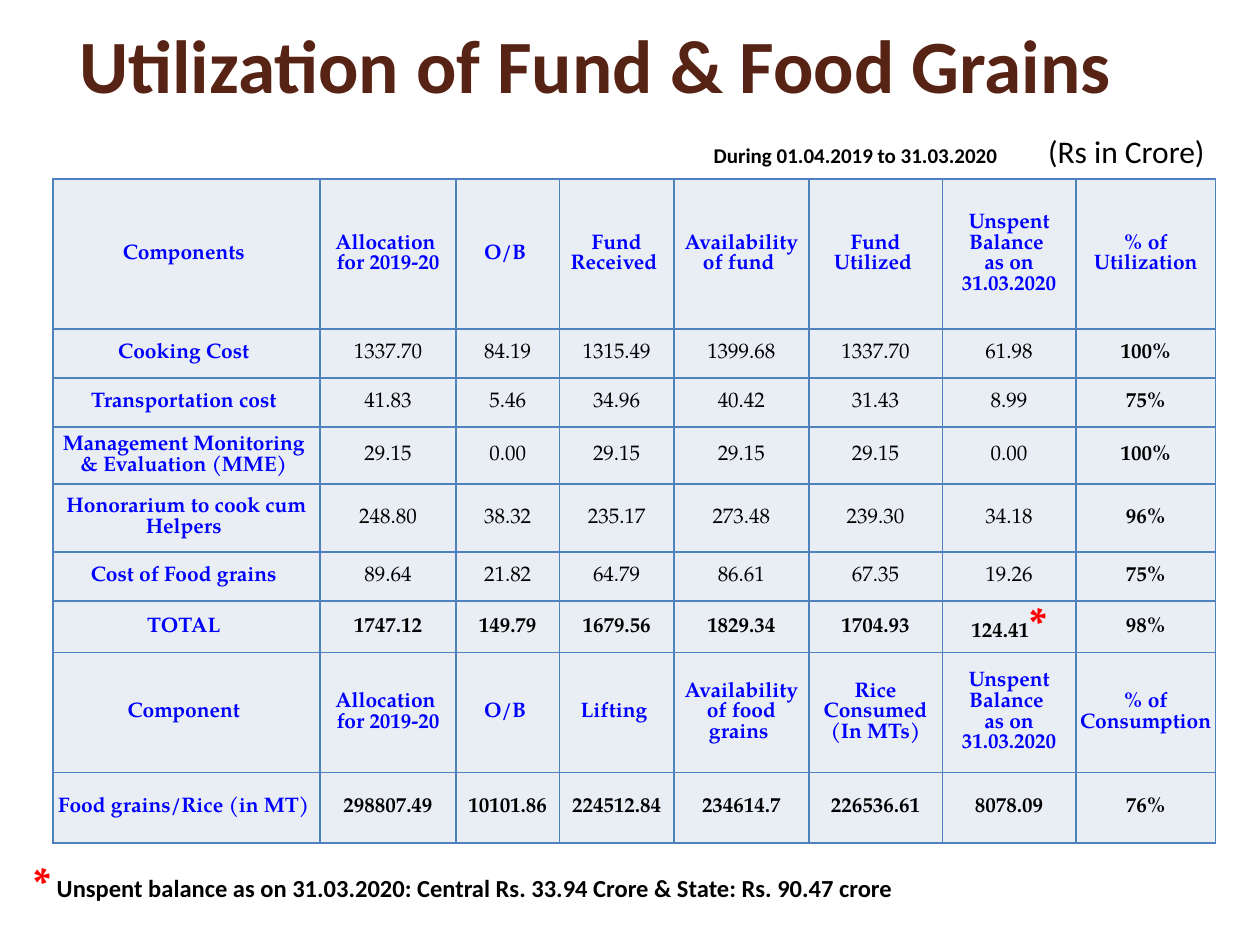
from lxml.etree import SubElement
from pptx import Presentation
from pptx.dml.color import RGBColor
from pptx.enum.text import MSO_ANCHOR as Anchor, MSO_AUTO_SIZE as AutoSize, PP_ALIGN as Align
from pptx.oxml.ns import qn
from pptx.util import Inches, Pt

SANS, SERIF = "Calibri", "TeX Gyre Pagella"
BLACK, BLUE, RED, BROWN = "000000", "0000FF", "FF0000", "572314"
CELL_FILL, GRID = "E9EDF4", "4F81BD"

COL_WIDTHS = [2.12, 1.08, 0.82, 0.91, 1.07, 1.06, 1.06, 1.11]
ROW_HEIGHTS = [1.19, 0.39, 0.39, 0.45, 0.54, 0.39, 0.39, 0.95, 0.56]
HEADER_ROWS = (0, 7)
BOLD_ROWS = (6, 8)
# A line break starts a new paragraph; a closing * becomes a red mark.
ROWS = [
    ["Components ", "Allocation \nfor 2019-20", "O/B ", "Fund Received ", "Availability of fund ",
     "Fund Utilized ", "Unspent Balance \nas on 31.03.2020", "% of Utilization"],
    ["Cooking Cost ", "1337.70", "84.19", "1315.49", "1399.68", "1337.70", "61.98", "100%"],
    ["Transportation cost ", "41.83", "5.46", "34.96", "40.42", "31.43", "8.99", "75%"],
    ["Management Monitoring \n& Evaluation (MME) ", "29.15", "0.00", "29.15", "29.15", "29.15",
     "0.00", "100%"],
    ["Honorarium to cook cum Helpers ", "248.80", "38.32", "235.17", "273.48", "239.30",
     "34.18", "96%"],
    ["Cost of Food grains ", "89.64", "21.82", "64.79", "86.61", "67.35", "19.26", "75%"],
    ["TOTAL ", "1747.12", "149.79", "1679.56", "1829.34", "1704.93", "124.41*", "98%"],
    ["Component ", "Allocation \nfor 2019-20", "O/B ", "Lifting ", "Availability of food grains ",
     "Rice Consumed (In MTs)", "Unspent Balance \nas on 31.03.2020", "% of Consumption"],
    ["Food grains/Rice (in MT) ", "298807.49", "10101.86", "224512.84", "234614.7", "226536.61",
     "8078.09", "76%"],
]


def rgb(color):
    return RGBColor.from_string(color)


def add_run(p, text, size, font=SANS, color=BLACK, bold=False):
    r = p.add_run()
    r.text = text
    r.font.size, r.font.name, r.font.bold = Pt(size), font, bold
    r.font.color.rgb = rgb(color)


def add_star(p):
    add_run(p, "*", 24, SERIF, RED, True)


def add_title(s, text):
    sp = s.shapes.title
    sp.left, sp.top, sp.width, sp.height = map(Inches, (0.5, 0.09, 8.58, 0.82))
    tf = sp.text_frame
    tf.word_wrap, tf.auto_size = True, AutoSize.SHAPE_TO_FIT_TEXT
    p = tf.paragraphs[0]
    p.alignment = Align.CENTER
    add_run(p, text, 43, SANS, BROWN, True)


def add_text_box(s, left, top, width, height, align):
    """Add an empty text box and return its first paragraph."""
    sp = s.shapes.add_textbox(*map(Inches, (left, top, width, height)))
    tf = sp.text_frame
    tf.word_wrap, tf.auto_size = True, AutoSize.SHAPE_TO_FIT_TEXT
    p = tf.paragraphs[0]
    p.alignment = align
    return p


def set_borders(cell):
    tc_pr = cell._tc.get_or_add_tcPr()
    for side in ("lnL", "lnR", "lnT", "lnB"):
        ln = SubElement(tc_pr, qn(f"a:{side}"), w=str(Pt(1)))
        fill = SubElement(ln, qn("a:solidFill"))
        SubElement(fill, qn("a:srgbClr"), val=GRID)


def fill_cell(cell, text, color, bold):
    set_borders(cell)
    cell.fill.solid()
    cell.fill.fore_color.rgb = rgb(CELL_FILL)
    cell.vertical_anchor = Anchor.MIDDLE
    cell.margin_left = cell.margin_right = cell.margin_top = Inches(0.01)
    cell.margin_bottom = 0
    tf = cell.text_frame
    for i, line in enumerate(text.split("\n")):
        p = tf.add_paragraph() if i else tf.paragraphs[0]
        p.alignment = Align.CENTER
        add_run(p, line.rstrip("*"), 12, SERIF, color, bold)
        if line.endswith("*"):
            add_star(p)


def add_fund_table(s):
    frame = s.shapes.add_table(len(ROWS), len(COL_WIDTHS), Inches(0.42), Inches(1.42),
                               Inches(sum(COL_WIDTHS)), Inches(sum(ROW_HEIGHTS)))
    table = frame.table
    table.first_row = table.horz_banding = False
    for column, width in zip(table.columns, COL_WIDTHS):
        column.width = Inches(width)
    last = len(COL_WIDTHS) - 1
    for i, (row, height, texts) in enumerate(zip(table.rows, ROW_HEIGHTS, ROWS)):
        row.height = Inches(height)
        for j, (cell, text) in enumerate(zip(row.cells, texts)):
            heading = i in HEADER_ROWS or j == 0
            bold = heading or i in BOLD_ROWS or j == last
            fill_cell(cell, text, BLUE if heading else BLACK, bold)


def main():
    prs = Presentation()
    prs.slide_width, prs.slide_height = Inches(10), Inches(7.5)
    s = prs.slides.add_slide(prs.slide_layouts[5])

    add_title(s, "Utilization of Fund & Food Grains ")
    unit = add_text_box(s, 7.83, 1, 1.83, 0.4, Align.RIGHT)
    add_run(unit, "(Rs in Crore)", 18)
    period = add_text_box(s, 5.33, 1.08, 2.92, 0.3, Align.CENTER)
    add_run(period, "During 01.04.2019 to 31.03.2020", 12, bold=True)

    add_fund_table(s)

    note = add_text_box(s, 0.17, 6.74, 9.08, 0.5, Align.LEFT)
    add_star(note)
    add_run(note, " ", 12, SERIF, RED, True)
    add_run(note, "Unspent balance as on 31.03.2020: Central Rs. 33.94 Crore & State: Rs. 90.47 crore",
            14, bold=True)

    prs.save("out.pptx")


if __name__ == "__main__":
    main()
